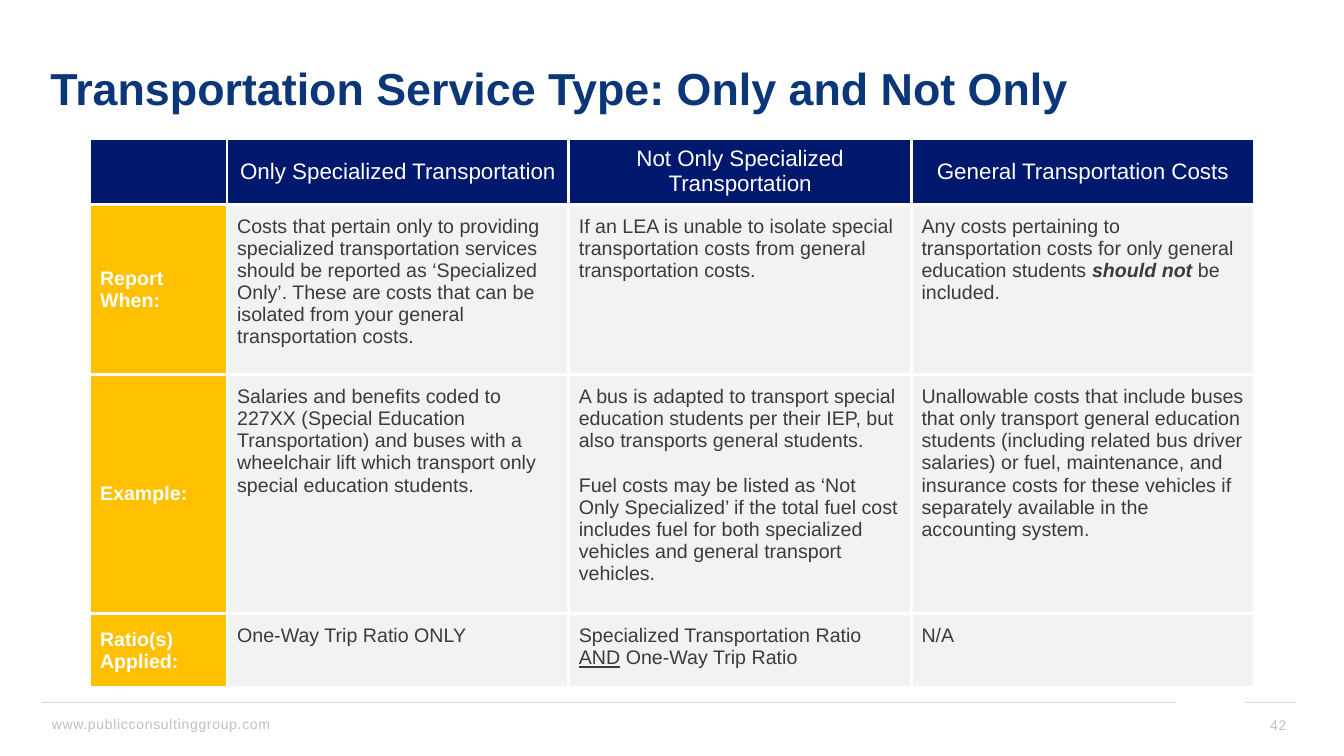
from dataclasses import dataclass

from lxml.etree import SubElement
from pptx import Presentation
from pptx.dml.color import RGBColor as RGB
from pptx.enum.shapes import MSO_CONNECTOR as Connector
from pptx.enum.text import MSO_ANCHOR as Anchor, MSO_AUTO_SIZE as AutoSize, PP_ALIGN as Align
from pptx.oxml import parse_xml
from pptx.oxml.ns import nsdecls, qn
from pptx.util import Pt


@dataclass(frozen=True)
class Theme:
    font: str = "Arial"
    title: str = "0B3677"
    header: str = "00186E"
    label: str = "FFC000"
    panel: str = "F2F2F2"
    body: str = "3B3B3B"
    white: str = "FFFFFF"
    footer: str = "BFBFBF"
    rule: str = "D9D9D9"
    title_size: int = 32
    header_size: int = 16
    body_size: int = 14
    footer_size: int = 10


class SlideBuilder:
    def __init__(self, slide, theme):
        self.slide, self.theme = slide, theme

    def add_runs(self, paragraph, runs, size, color, align=Align.LEFT, spacing=0, **base):
        """Add runs, each a string or a (string, format dict) pair."""
        paragraph.alignment = align
        for item in runs:
            words, extra = (item, {}) if isinstance(item, str) else item
            run = paragraph.add_run()
            run.text = words
            formats = {"name": self.theme.font, "size": Pt(size), "bold": False, **base, **extra}
            for attribute, value in formats.items():
                setattr(run.font, attribute, value)
            run.font.color.rgb = RGB.from_string(color)
            if spacing:
                run._r.get_or_add_rPr().set("spc", str(spacing))

    def title(self, words, left, top, width, height):
        holder = self.slide.shapes.title
        place = {"left": left, "top": top, "width": width, "height": height}
        for attribute, value in place.items():
            setattr(holder, attribute, Pt(value))
        frame = holder.text_frame
        frame.word_wrap, frame.auto_size = True, AutoSize.NONE
        frame.vertical_anchor = Anchor.MIDDLE
        paragraph = frame.paragraphs[0]
        paragraph.line_spacing = 0.9
        self.add_runs(paragraph, [words], self.theme.title_size, self.theme.title, bold=True)

    def footer_text(self, words, left, top, width, height, align, anchor):
        box = self.slide.shapes.add_textbox(Pt(left), Pt(top), Pt(width), Pt(height))
        box.text_frame.word_wrap = True
        box.text_frame.vertical_anchor = anchor
        self.add_runs(box.text_frame.paragraphs[0], [words], self.theme.footer_size,
                      self.theme.footer, align, spacing=50)

    def rule(self, start, end, y):
        line = self.slide.shapes.add_connector(Connector.STRAIGHT, Pt(start), Pt(y), Pt(end), Pt(y))
        line.line.color.rgb = RGB.from_string(self.theme.rule)
        line.line.width = Pt(0.5)
        SubElement(line._element.spPr, qn("a:effectLst"))

    def cell(self, cell, paragraphs, fill, size, color, anchor=Anchor.MIDDLE,
             align=Align.LEFT, top=3.6, **base):
        cell.fill.solid()
        cell.fill.fore_color.rgb = RGB.from_string(fill)
        cell.vertical_anchor = anchor
        cell.margin_top = Pt(top)
        for index, runs in enumerate(paragraphs):
            frame = cell.text_frame
            paragraph = frame.add_paragraph() if index else frame.paragraphs[0]
            if index:
                paragraph.space_before = Pt(16)
            self.add_runs(paragraph, runs, size, color, align, **base)
        # White borders on all four sides
        for index, side in enumerate("LRTB"):
            border = parse_xml(
                f'<a:ln{side} {nsdecls("a")} w="{Pt(2.25)}"><a:solidFill>'
                f'<a:srgbClr val="{self.theme.white}"/></a:solidFill></a:ln{side}>')
            cell._tc.get_or_add_tcPr().insert(index, border)

    def table(self, headers, rows, left, top, widths, heights):
        theme = self.theme
        table = self.slide.shapes.add_table(
            len(heights), len(widths), Pt(left), Pt(top), Pt(sum(widths)), Pt(sum(heights))).table
        for column, width in zip(table.columns, widths):
            column.width = Pt(width)
        for row, height in zip(table.rows, heights):
            row.height = Pt(height)
        for c, header in enumerate(headers):
            self.cell(table.cell(0, c), [[header]] if header else [], theme.header,
                      theme.header_size, theme.white, align=Align.CENTER)
        for r, (label, *details) in enumerate(rows, 1):
            self.cell(table.cell(r, 0), [[label]], theme.label, theme.body_size,
                      theme.white, bold=True)
            for c, paragraphs in enumerate(details, 1):
                self.cell(table.cell(r, c), paragraphs, theme.panel, theme.body_size,
                          theme.body, Anchor.TOP, top=8.2)


HEADERS = ["", "Only Specialized Transportation", "Not Only Specialized Transportation",
           "General Transportation Costs"]

# Each detail cell is a list of paragraphs, each a list of runs
ROWS = [
    ("Report When:",
     [["Costs that pertain only to providing specialized transportation services should be "
       "reported as ‘Specialized Only’. These are costs that can be isolated from your general "
       "transportation costs."]],
     [["If an LEA is unable to isolate special transportation costs from general "
       "transportation costs."]],
     [["Any costs pertaining to transportation costs for only general education students ",
       ("should not ", {"bold": True, "italic": True}), "be included."]]),
    ("Example:",
     [["Salaries and benefits coded to 227XX (Special Education Transportation) and buses with "
       "a wheelchair lift which transport only special education students."]],
     [["A bus is adapted to transport special education students per their IEP, but also "
       "transports general students."],
      ["Fuel costs may be listed as ‘Not Only Specialized’ if the total fuel cost includes fuel "
       "for both specialized vehicles and general transport vehicles."]],
     [["Unallowable costs that include buses that only transport general education students "
       "(including related bus driver salaries) or fuel, maintenance, and insurance costs for "
       "these vehicles if separately available in the accounting system."]]),
    ("Ratio(s) Applied:",
     [["One-Way Trip Ratio ONLY"]],
     [["Specialized Transportation Ratio ", ("AND", {"underline": True}),
       " One-Way Trip Ratio"]],
     [["N/A"]]),
]


def main():
    deck = Presentation()
    deck.slide_width, deck.slide_height = Pt(960), Pt(540)
    builder = SlideBuilder(deck.slides.add_slide(deck.slide_layouts[5]), Theme())

    # Footer
    builder.footer_text("www.publicconsultinggroup.com", 30, 507.6, 278.6, 20,
                        Align.LEFT, Anchor.TOP)
    builder.rule(30, 840, 502)
    builder.rule(889, 926, 502)
    builder.footer_text("42", 895.7, 503.3, 30.2, 28.8, Align.RIGHT, Anchor.MIDDLE)

    # Title and comparison table
    builder.title("Transportation Service Type: Only and Not Only", 28.8, 28.8, 900, 72.7)
    builder.table(HEADERS, ROWS, 64.3, 98.9, [97.9, 244.1, 244.8, 244.8],
                  [47.2, 121.5, 170.6, 53.1])

    deck.save("out.pptx")


if __name__ == "__main__":
    main()
